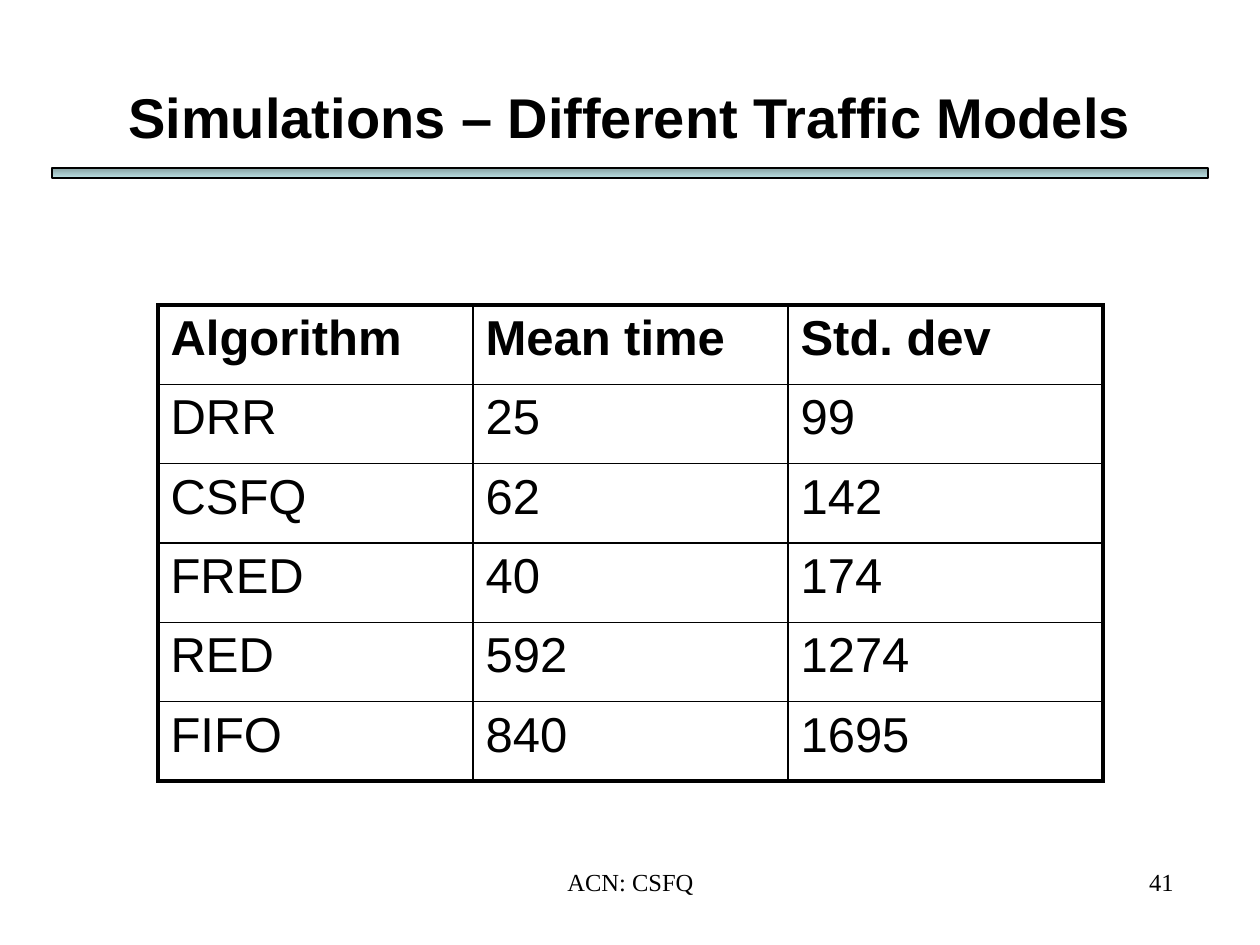
from lxml import etree
from pptx import Presentation
from pptx import util as u
from pptx.dml.color import RGBColor
from pptx.enum import shapes, text
from pptx.oxml.ns import qn

EMU_PER_PX = 914400 / 126
BLACK = "000000"
THIN, THICK = 1, 2.25
ROWS = [
    ("Algorithm", "Mean time", "Std. dev"),
    ("DRR", "25", "99"),
    ("CSFQ", "62", "142"),
    ("FRED", "40", "174"),
    ("RED", "592", "1274"),
    ("FIFO", "840", "1695"),
]


def px(length):
    """Turn pixels into EMU."""
    return u.Emu(round(length * EMU_PER_PX))


def color(code):
    """Turn a hex string into a colour."""
    return RGBColor.from_string(code)


def add_solid_fill(parent, code):
    """Append a solid fill to an XML element."""
    fill = etree.SubElement(parent, qn("a:solidFill"))
    etree.SubElement(fill, qn("a:srgbClr"), val=code)


def format_text(frame, size, font, align, bold=False):
    """Format the first paragraph of a text frame and return its run."""
    para = frame.paragraphs[0]
    para.alignment = align
    span = para.runs[0]
    span.font.size = u.Pt(size)
    span.font.name = font
    span.font.bold = bold
    span.font.color.rgb = color(BLACK)
    return span


def add_text_shadow(span):
    """Give a run a grey shadow down and to the right."""
    effects = etree.Element(qn("a:effectLst"))
    shadow = etree.SubElement(effects, qn("a:outerShdw"),
                              dist="38100", dir="2700000", algn="tl")
    etree.SubElement(shadow, qn("a:srgbClr"), val="808080")
    span.font.fill._xPr.find(qn("a:solidFill")).addnext(effects)


def set_title(slide, wording):
    """Fill and place the title placeholder."""
    title = slide.shapes.title
    title.left, title.top, title.width, title.height = map(px, (63, 38, 1134, 157))
    frame = title.text_frame
    frame.text = wording
    frame.vertical_anchor = text.MSO_ANCHOR.MIDDLE
    add_text_shadow(format_text(frame, 32, "Arial", text.PP_ALIGN.CENTER, True))


def add_rule(slide):
    """Add the gradient bar under the title."""
    bar = slide.shapes.add_shape(shapes.MSO_SHAPE.RECTANGLE,
                                 *map(px, (52, 168, 1156, 10)))
    bar.shadow.inherit = False
    bar.fill.gradient()
    bar.fill.gradient_angle = 270
    for stop, code in zip(bar.fill.gradient_stops, ("86A0A2", "BBE0E3")):
        stop.color.rgb = color(code)
    bar.line.color.rgb = color(BLACK)
    bar.line.width = u.Pt(0.75)


def add_footer(slide, wording, left, width, align):
    """Add one footer text box."""
    box = slide.shapes.add_textbox(*map(px, (left, 861, width, 63)))
    box.text_frame.word_wrap = True
    box.text_frame.text = wording
    format_text(box.text_frame, 14, "Times New Roman", align)


def set_borders(cell, widths):
    """Draw the left, right, top and bottom borders of a cell."""
    properties = cell._tc.get_or_add_tcPr()
    for index, (side, width) in enumerate(zip("LRTB", widths)):
        line = etree.Element(qn(f"a:ln{side}"), w=str(u.Pt(width)))
        add_solid_fill(line, BLACK)
        properties.insert(index, line)


def fill_cell(cell, wording, bold):
    """Write and format one table cell."""
    cell.fill.background()
    cell.text_frame.text = wording
    format_text(cell.text_frame, 28, "Arial", text.PP_ALIGN.LEFT, bold)
    spacing = etree.Element(qn("a:spcBef"))
    etree.SubElement(spacing, qn("a:spcPct"), val="20000")
    cell.text_frame.paragraphs[0]._p.get_or_add_pPr().insert(0, spacing)


def add_results(slide, rows):
    """Add the results table with a thick outer frame."""
    last_row, last_column = len(rows) - 1, len(rows[0]) - 1
    frame = slide.shapes.add_table(len(rows), len(rows[0]),
                                   *map(px, (158, 305, 945, 476)))
    table = frame.table
    table.first_row = table.horz_banding = False
    for r, row in enumerate(rows):
        for c, wording in enumerate(row):
            cell = table.cell(r, c)
            fill_cell(cell, wording, r == 0)
            outer = (c == 0, c == last_column, r == 0, r == last_row)
            set_borders(cell, [THICK if edge else THIN for edge in outer])


def main():
    """Build the slide and save the deck."""
    deck = Presentation()
    deck.slide_width, deck.slide_height = px(1260), px(945)
    slide = deck.slides.add_slide(deck.slide_layouts[5])
    add_footer(slide, "ACN: CSFQ", 431, 399, text.PP_ALIGN.CENTER)
    add_footer(slide, "41", 924, 262, text.PP_ALIGN.RIGHT)
    set_title(slide, "Simulations – Different Traffic Models")
    add_rule(slide)
    add_results(slide, ROWS)
    deck.save("out.pptx")


if __name__ == "__main__":
    main()
